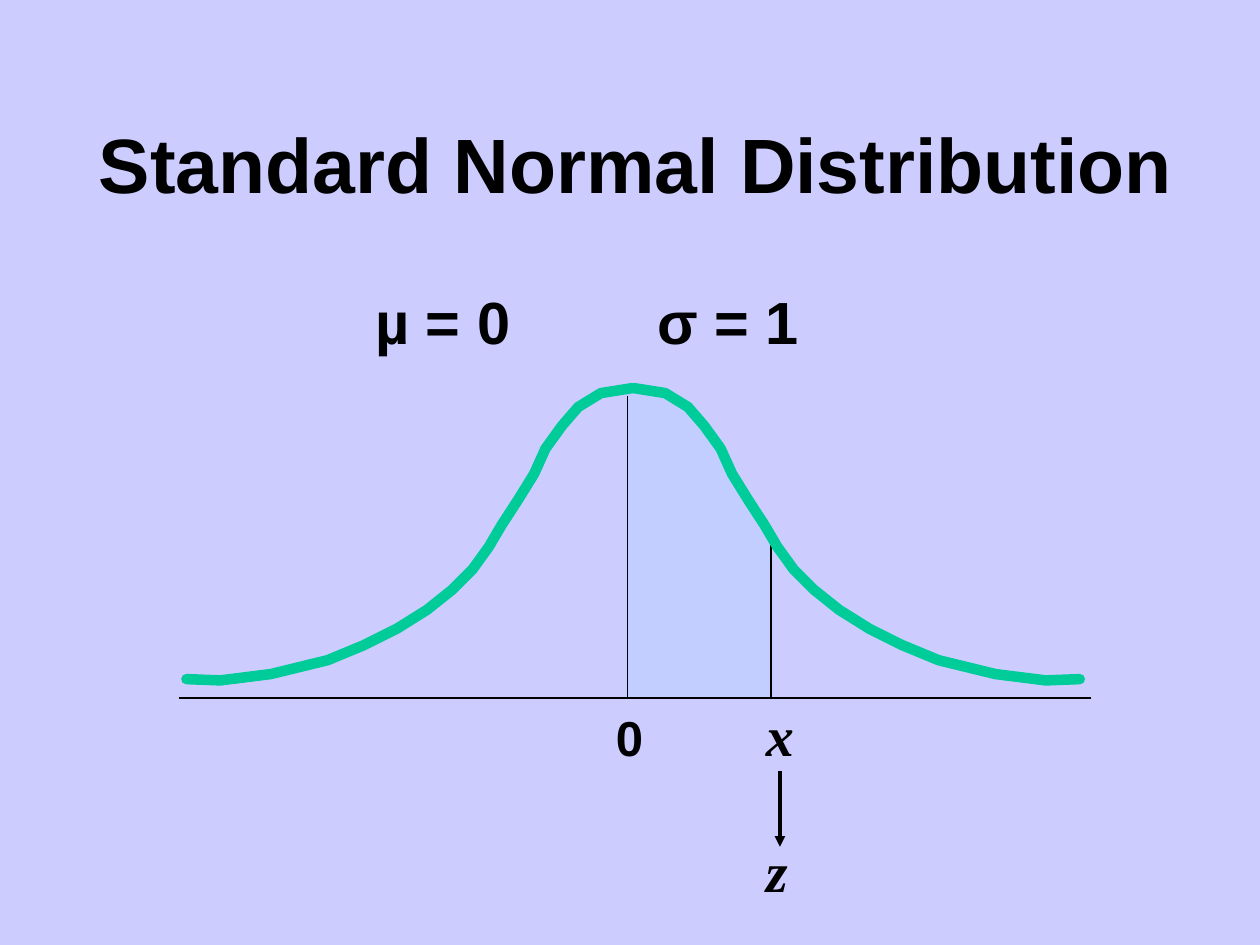
from lxml import etree
from pptx import Presentation
from pptx import util as u
from pptx.dml.color import RGBColor
from pptx.enum import shapes, text
from pptx.oxml.ns import qn

BACKGROUND = RGBColor(0xCC, 0xCC, 0xFF)
BLACK = RGBColor(0, 0, 0)
GREEN = RGBColor(0x00, 0xCC, 0x99)
SHADE = RGBColor(0xC1, 0xCE, 0xFF)

HEADING = {"name": "Arial", "size": u.Pt(44), "bold": True}
PARAMETER = {"name": "Arial", "size": u.Pt(34), "bold": True}
NUMBER = {"name": "Arial", "size": u.Pt(28), "bold": True}
VARIABLE = {"name": "Times New Roman", "size": u.Pt(32), "bold": True, "italic": True}

AXIS_Y = 5.54
MEAN_X = 4.98
CURVE_WIDTH_SUM = 10.05  # left x plus mirrored right x
LEFT_TAIL = [
    (1.48, 5.39), (1.75, 5.4), (2.15, 5.35), (2.6, 5.24), (2.89, 5.12), (3.15, 4.99),
    (3.39, 4.84), (3.59, 4.68), (3.75, 4.52), (3.88, 4.34), (3.98, 4.17), (4.11, 3.97),
    (4.24, 3.76), (4.33, 3.56), (4.46, 3.38), (4.59, 3.23), (4.77, 3.12), (5.02, 3.08),
]
RIGHT_TAIL = [(CURVE_WIDTH_SUM - x, y) for x, y in LEFT_TAIL]
SHADED_AREA = [(6.13, 4.33), (6.13, AXIS_Y), (MEAN_X, AXIS_Y),
               (MEAN_X, 3.13), (5.33, 3.13), (5.56, 3.28)]


class Diagram:
    def __init__(self, prs):
        self.s = prs.slides.add_slide(prs.slide_layouts[5])
        fill = self.s.background.fill
        fill.solid()
        fill.fore_color.rgb = BACKGROUND

    def add_runs(self, p, runs):
        """Add (text, format) pairs to a paragraph as runs."""
        for content, style in runs:
            r = p.add_run()
            r.text = content
            r.font.color.rgb = BLACK
            for name, value in style.items():
                setattr(r.font, name, value)

    def title(self, content, box):
        sp = self.s.shapes.title
        sp.left, sp.top, sp.width, sp.height = map(u.Inches, box)
        tf = sp.text_frame
        tf.auto_size = text.MSO_AUTO_SIZE.NONE
        tf.vertical_anchor = text.MSO_ANCHOR.MIDDLE
        p = tf.paragraphs[0]
        p.alignment = text.PP_ALIGN.CENTER
        self.add_runs(p, [(content, HEADING)])

    def label(self, box, runs, tabs=(), spacing=0.9):
        sp = self.s.shapes.add_textbox(*map(u.Inches, box))
        tf = sp.text_frame
        tf.word_wrap = True
        p = tf.paragraphs[0]
        p.line_spacing = spacing
        if tabs:
            stops = etree.SubElement(p._p.get_or_add_pPr(), qn("a:tabLst"))
            for pos in tabs:
                etree.SubElement(stops, qn("a:tab"), pos=str(u.Inches(pos)), algn="l")
        self.add_runs(p, runs)

    def line(self, start, end, width=1, arrow=False):
        sp = self.s.shapes.add_connector(
            shapes.MSO_CONNECTOR.STRAIGHT, *map(u.Inches, (*start, *end)))
        sp.line.color.rgb = BLACK
        sp.line.width = u.Pt(width)
        spPr = sp._element.spPr
        if arrow:
            etree.SubElement(spPr.find(qn("a:ln")), qn("a:tailEnd"), type="triangle")
        etree.SubElement(spPr, qn("a:effectLst"))

    def outline(self, parent, points, color, width, closed=False):
        """Draw a filled shape if closed, otherwise an open round-ended stroke."""
        pts = [(u.Inches(x), u.Inches(y)) for x, y in points]
        builder = parent.build_freeform(*pts[0])
        builder.add_line_segments(pts[1:], close=closed)
        sp = builder.convert_to_shape()
        sp.shadow.inherit = False
        sp.line.color.rgb = color
        sp.line.width = u.Pt(width)
        if closed:
            sp.fill.solid()
            sp.fill.fore_color.rgb = color
        else:
            sp.fill.background()
            ln = sp._element.spPr.find(qn("a:ln"))
            ln.set("cap", "rnd")
            etree.SubElement(ln, qn("a:round"))

    def curve(self, halves):
        group = self.s.shapes.add_group_shape()
        for points in halves:
            self.outline(group.shapes, points, GREEN, 6)


def main():
    prs = Presentation()
    prs.slide_width, prs.slide_height = u.Inches(10), u.Inches(7.5)
    d = Diagram(prs)
    d.title("Standard Normal Distribution", (0.12, 0.67, 9.86, 1.25))
    d.label((0, 2.21, 9.92, 0.7), [("\tµ = 0\tσ = 1", PARAMETER)],
            tabs=(2.88, 5.12), spacing=1.0)

    d.outline(d.s.shapes, SHADED_AREA, SHADE, 1, closed=True)
    d.line((6.12, 5.55), (6.12, 4.31))
    d.curve([LEFT_TAIL, RIGHT_TAIL])
    d.line((1.42, AXIS_Y), (8.66, AXIS_Y))
    d.line((MEAN_X, 3.14), (MEAN_X, 5.53))

    d.label((4.79, 5.57, 2.97, 0.58), [("0\t", NUMBER), ("x", VARIABLE)], tabs=(1.19,))
    d.label((5.98, 6.65, 2.86, 0.58), [("z", VARIABLE)])
    d.line((6.19, 6.12), (6.19, 6.72), width=2, arrow=True)
    prs.save("out.pptx")


if __name__ == "__main__":
    main()
